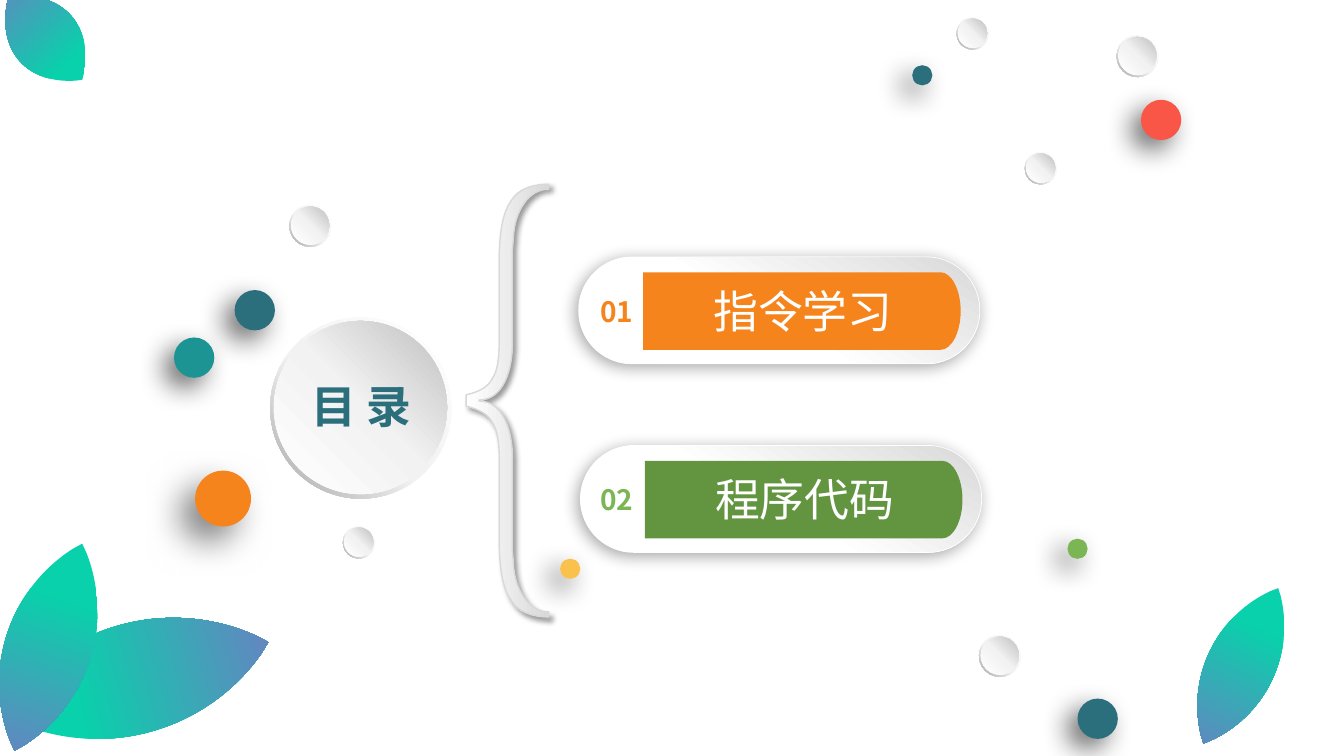
from lxml import etree
from pptx import Presentation
from pptx.dml.color import RGBColor
from pptx.enum.shapes import MSO_SHAPE
from pptx.enum.text import PP_ALIGN
from pptx.oxml.ns import qn
from pptx.util import Pt

OVAL, RING, PILL = MSO_SHAPE.OVAL, MSO_SHAPE.DONUT, MSO_SHAPE.ROUNDED_RECTANGLE
CENTER = PP_ALIGN.CENTER
FONT = "Noto Sans CJK SC"
TEAL, ORANGE, GREEN, LIME, WHITE = "2B6F7D", "F5841C", "639541", "7CB554", "FFFFFF"

RIM_STOPS = [(0, WHITE), (55, "F2F2F2"), (100, "A6A6A6")]
DISC_STOPS = [(0, WHITE), (51, "F2F2F2"), (100, "BFBFBF")]
LEAF_STOPS = [(0, "09D1AB"), (31, "09D1AB"), (100, "6E7DC3")]
PILL_STOPS = [(45, WHITE), (100, "D9D9D9")]
BRACE_STOPS = [(0, WHITE), (100, "D9D9D9")]
BALL_SHADOW = (60, 20, 10, 135)

LEAF_HALF = [(50, 0), (42, 3.4), (17, 15.4, 0, 31.7, 0, 50),
             (0, 68.3, 17, 84.6, 42, 96.6), (50, 100)]
BRACE_HALF = [(0, 150.5), (9.4, 148.3, 15.8, 144.7, 18.7, 139),
              (22.3, 133.9, 23.8, 124.6, 23.8, 111.6), (23.8, 53.3),
              (23.8, 33.1, 26.6, 19.4, 32.4, 11.5), (37.4, 3.6, 46.8, 0, 59, 0),
              (59, 3.6), (58.3, 3.6), (45.4, 3.6, 34.6, 18.7, 33.8, 38.2),
              (33.1, 47.5), (33.1, 114.5), (33.1, 132.5, 26.6, 154.1, 9.4, 154.1)]
BAR_HALF = [(0, 0), (212.4, 0), (220.3, 0, 226.8, 12.6, 226.8, 27.7)]

LEAVES = [((56.9, 385.9, 79.2, 197.3), 254.8), ((3.6, 384.5, 61.9, 155.5), 18.1),
          ((861.8, 414, 49, 123.1), 25.7), ((7.9, -12.2, 49, 79.2), 138.3)]
DIMPLES = [(683.3, 12.4, 23), (797.6, 25.1, 30), (244.9, 375.9, 23),
           (732, 108.7, 23), (699.3, 453.5, 30), (206.7, 146.3, 30)]
BALLS = [(815, 71.3, 28.8, "F95647"), (651.6, 46.6, 14.4, TEAL),
         (167.6, 207.2, 28.8, TEAL), (400.1, 399.1, 14.4, "FAC14D"),
         (769.7, 499, 28.8, TEAL), (124.3, 241.1, 28.8, "1C9494"),
         (762.5, 384.8, 14.4, LIME)]
TOPICS = [((413.3, 183.5, 286.6, 76.4), 7.9, "01", "指令学习", ORANGE, ORANGE),
          ((414.6, 318.2, 286.6, 76.4), 6.6, "02", "程序代码", GREEN, LIME)]


def rgb(code):
    """Turn a hex string into a colour."""
    return RGBColor.from_string(code)


def paint(shape, fill, angle=0, line=None, shadow=None):
    """Set a solid or gradient fill, an outline and a soft shadow."""
    if isinstance(fill, str):
        shape.fill.solid()
        shape.fill.fore_color.rgb = rgb(fill)
    else:
        shape.fill.gradient()
        shape.fill.gradient_angle = 360 - angle
        stops = next(shape.element.spPr.iter(qn("a:gsLst")))
        for old in list(stops):
            stops.remove(old)
        for position, code in fill:
            stop = etree.SubElement(stops, qn("a:gs"), pos=str(position * 1000))
            etree.SubElement(stop, qn("a:srgbClr"), val=code)
    if line:
        shape.line.color.rgb = rgb(line[0])
        shape.line.width = Pt(line[1])
    else:
        shape.line.fill.background()
    shape.shadow.inherit = False
    if shadow:
        alpha, blur, distance, direction = shadow
        effects = shape.element.spPr.find(qn("a:effectLst"))
        outer = etree.SubElement(effects, qn("a:outerShdw"), blurRad=str(Pt(blur)),
                                 dist=str(Pt(distance)), dir=str(direction * 60000),
                                 rotWithShape="0")
        tint = etree.SubElement(outer, qn("a:srgbClr"), val="000000")
        etree.SubElement(tint, qn("a:alpha"), val=str(alpha * 1000))


def preset(slide, kind, box, fill, adjust=None, **style):
    """Place a painted preset shape."""
    shape = slide.shapes.add_shape(kind, *map(Pt, box))
    if adjust is not None:
        shape.adjustments[0] = adjust
    paint(shape, fill, **style)


def mirrored(half, flip):
    """Extend half an outline with its flipped steps in reverse order."""
    steps = list(half) + [flip(*half[-1][-2:])]
    for before, step in zip(half[-2::-1], half[:0:-1]):
        points = [before[-2:]] if len(step) == 2 else [step[2:4], step[:2], before[-2:]]
        steps.append(tuple(n for point in reversed(points[::-1]) for n in flip(*point)))
    return [step for i, step in enumerate(steps) if i == 0 or step != steps[i - 1][-2:]]


def outline(slide, box, design, half, sideways, fill, rotation=0, **style):
    """Draw half an outline and its mirror image, scaled to the box."""
    left, top, width, height = box
    across, down = design
    builder = slide.shapes.build_freeform(Pt(left), Pt(top))
    builder.add_line_segments([(Pt(left + width), Pt(top)),
                               (Pt(left + width), Pt(top + height))])
    shape = builder.convert_to_shape()
    route = next(shape.element.spPr.iter(qn("a:path")))
    for old in list(route):
        route.remove(old)
    route.set("w", str(round(across * 100)))
    route.set("h", str(round(down * 100)))
    steps = mirrored(half, lambda x, y: (across - x, y) if sideways else (x, down - y))
    for i, step in enumerate(steps):
        command = "a:moveTo" if i == 0 else "a:lnTo" if len(step) == 2 else "a:cubicBezTo"
        node = etree.SubElement(route, qn(command))
        for x, y in zip(step[::2], step[1::2]):
            etree.SubElement(node, qn("a:pt"), x=str(round(x * 100)), y=str(round(y * 100)))
    etree.SubElement(route, qn("a:close"))
    shape.rotation = rotation
    paint(shape, fill, **style)


def write(slide, box, text, size, color, bold=False, wrap=True, margins=(7.2, 3.6)):
    """Place one centred line of text."""
    frame = slide.shapes.add_textbox(*map(Pt, box)).text_frame
    frame.word_wrap = wrap
    frame.margin_left = frame.margin_right = Pt(margins[0])
    frame.margin_top = frame.margin_bottom = Pt(margins[1])
    paragraph = frame.paragraphs[0]
    paragraph.alignment = CENTER
    run = paragraph.add_run()
    run.text = text
    run.font.size, run.font.bold, run.font.name = Pt(size), bold, FONT
    run.font.color.rgb = rgb(color)
    etree.SubElement(run.font._element, qn("a:ea"), typeface=FONT)


def dimple(slide, left, top, size, share=0.91):
    """Draw a grey disc inside a bevelled rim."""
    inset, disc = size * (1 - share) * 0.45, size * share
    preset(slide, RING, (left, top, size, size), RIM_STOPS, adjust=0.049, angle=135)
    preset(slide, OVAL, (left + inset, top + inset, disc, disc), DISC_STOPS, angle=315)


def contents_title(slide, box):
    """Draw the big disc with the heading."""
    left, top, size = box
    dimple(slide, left, top, size, share=0.955)
    write(slide, (left + 8.6, top + 43.9, 113, 38.9), "目 录", 32, TEAL,
          bold=True, margins=(0, 0))


def topic(slide, box, indent, number, title, bar_color, number_color):
    """Draw one numbered entry of the contents."""
    left, top, width, height = box
    preset(slide, PILL, box, PILL_STOPS, adjust=0.5, angle=300,
           line=(WHITE, 0.5), shadow=(34, 12, 3, 135))
    outline(slide, (left + 46.1, top + 11, 226.8, 55.4), (226.8, 55.4), BAR_HALF,
            False, bar_color)
    write(slide, (left + indent, top + 23.1, 38.9, 31.7), number, 20, number_color,
          bold=True, wrap=False)
    write(slide, (left + 80.7, top + 15.5, 159.1, 46.1), title, 32, WHITE)


def decorations(slide):
    """Scatter the leaves, balls and dimples."""
    for box, rotation in LEAVES:
        outline(slide, box, (100, 100), LEAF_HALF, True, LEAF_STOPS,
                rotation=rotation, angle=90)
    for place in DIMPLES:
        dimple(slide, *place)
    for left, top, size, color in BALLS:
        preset(slide, OVAL, (left, top, size, size), color, shadow=BALL_SHADOW)
    preset(slide, OVAL, (139.4, 336.2, 39.9, 39.9), ORANGE, shadow=(50, 25, 15, 135))


def main():
    """Build the contents slide."""
    deck = Presentation()
    deck.slide_width, deck.slide_height = Pt(960), Pt(540)
    slide = deck.slides.add_slide(deck.slide_layouts[6])
    contents_title(slide, (193, 226.6, 129.6))
    outline(slide, (332.9, 131.6, 59, 309), (59, 309), BRACE_HALF, False, BRACE_STOPS,
            line=("D9D9D9", 1), shadow=(40, 4, 3, 45))
    for entry in TOPICS:
        topic(slide, *entry)
    decorations(slide)
    deck.save("out.pptx")


if __name__ == "__main__":
    main()
